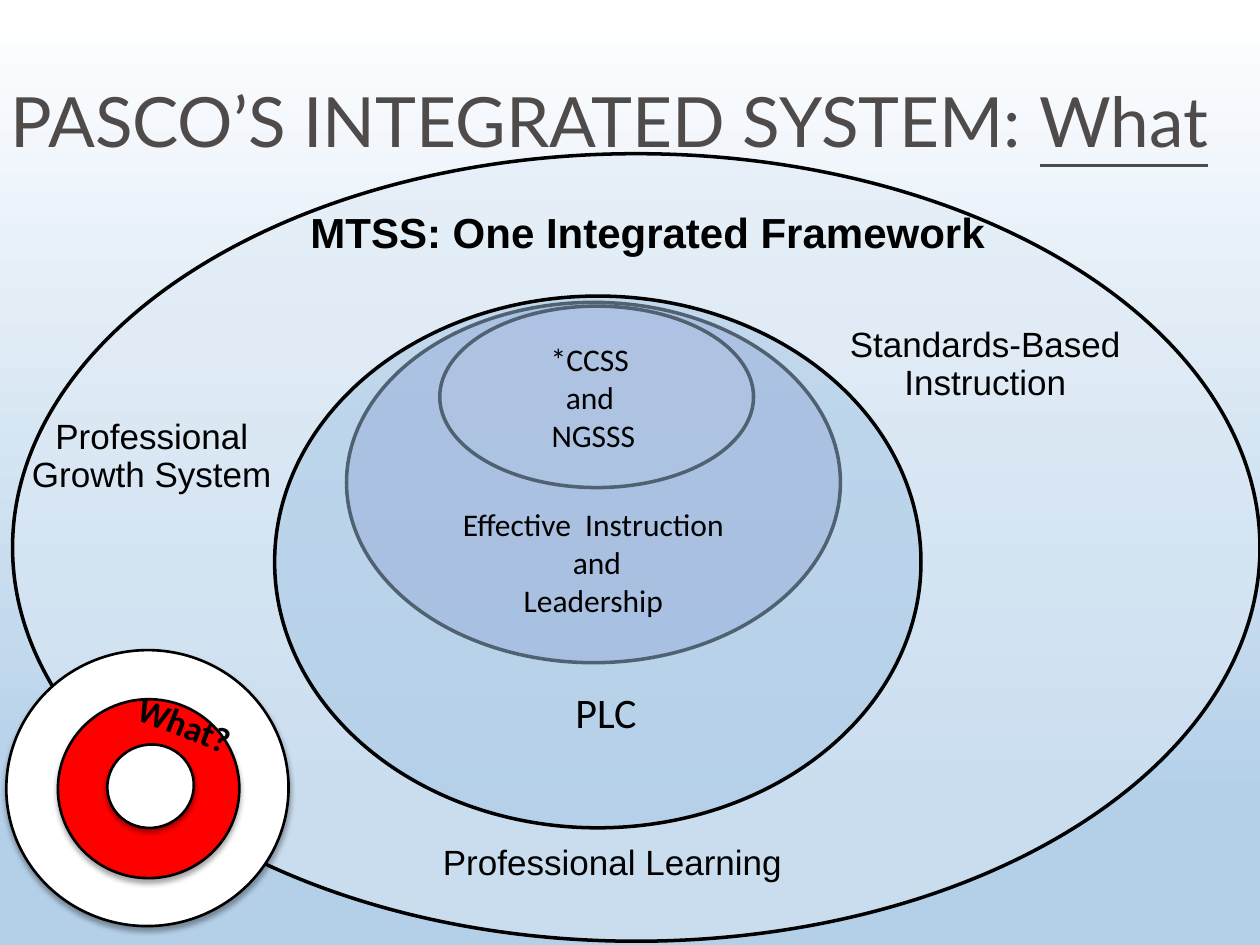
from collections import namedtuple

from lxml.etree import SubElement
from pptx import Presentation
from pptx.dml.color import RGBColor
from pptx.enum.shapes import MSO_SHAPE
from pptx.enum.text import MSO_ANCHOR as Anchor, MSO_AUTO_SIZE as AutoSize, PP_ALIGN as Align
from pptx.oxml.ns import qn
from pptx.util import Inches, Pt

COLORS = {
    "black": "000000", "white": "FFFFFF", "sky": "B4D0E9", "title": "4F4B4B",
    "framework": "E0EBF6", "community": "A1C4E3", "instruction": "9297CF",
    "standards": "C9CBE7", "target": "FF0000",
}
COLUMNS, ROWS = 100, 75
SLIDE_WIDTH, SLIDE_HEIGHT = Inches(10), Inches(7.5)
TITLE_ONLY = 5

Box = namedtuple("Box", "column row columns rows")


def color(name):
    return RGBColor.from_string(COLORS[name])


def inside(box, column, row, columns, rows):
    """Give a box whose place is counted from the corner of another."""
    return Box(box.column + column, box.row + row, columns, rows)


def lengths(box):
    """Turn grid columns and rows into slide lengths."""
    column, row = SLIDE_WIDTH / COLUMNS, SLIDE_HEIGHT / ROWS
    return [int(share * unit) for share, unit in zip(box, (column, row, column, row))]


def set_format(target, **values):
    for name, value in values.items():
        setattr(target, name, value)


def add_ellipse(slide, box, fill, opacity=100, line_width=2, rotation=0):
    ellipse = slide.shapes.add_shape(MSO_SHAPE.OVAL, *lengths(box))
    ellipse.shadow.inherit = False
    ellipse.rotation = rotation
    ellipse.fill.solid()
    ellipse.fill.fore_color.rgb = color(fill)
    ellipse.line.color.rgb = color("black")
    ellipse.line.width = Pt(line_width)
    if opacity < 100:
        fill_color = ellipse.element.spPr.find(qn("a:solidFill"))[0]
        SubElement(fill_color, qn("a:alpha"), val=str(opacity * 1000))
    return ellipse


def add_drop_shadow(shape):
    effects = shape.element.spPr.find(qn("a:effectLst"))
    shadow = SubElement(effects, qn("a:outerShdw"), blurRad=str(Pt(3)), dist=str(Pt(2)),
                        dir="5400000", rotWithShape="0")
    shadow_color = SubElement(shadow, qn("a:srgbClr"), val=COLORS["black"])
    SubElement(shadow_color, qn("a:alpha"), val="35000")


def add_label(slide, box, lines, size, font="Calibri", bold=False, wrap=True,
              align=Align.CENTER, rotation=0):
    label = slide.shapes.add_textbox(*lengths(box))
    label.rotation = rotation
    frame = label.text_frame
    frame.text = "\n".join(lines)
    frame.word_wrap = wrap
    for paragraph in frame.paragraphs:
        paragraph.alignment = align
        set_format(paragraph.runs[0].font, name=font, size=Pt(size), bold=bold)
        paragraph.runs[0].font.color.rgb = color("black")
    return frame


def paint_background(slide):
    fill = slide.background.fill
    fill.gradient()
    fill.gradient_angle = 270
    for stop, name, position in zip(fill.gradient_stops, ("white", "sky"), (0, 0.85)):
        stop.color.rgb = color(name)
        stop.position = position


def add_framework(slide, box):
    """Draw the nested ellipses with their labels."""
    add_ellipse(slide, box, "framework", 50)
    for place, fill, opacity in (
        ((26.5, 11.8, 39.2, 28.6), "instruction", 50),
        ((33.9, 12.1, 24.9, 14.4), "standards", 32),
        ((20.8, 11.3, 51.3, 42.2), "community", 50),
    ):
        add_ellipse(slide, inside(box, *place), fill, opacity)

    for place, text in (
        ((0.2, 12.2, 21.7, 23.8), "Professional Growth System"),
        ((66.2, 7.9, 22, 17.8), "Standards-Based Instruction"),
        ((15.7, 51.7, 64.6, 9.4), "Professional Learning "),
    ):
        frame = add_label(slide, inside(box, *place), [text], 20, "Arial")
        set_format(frame, vertical_anchor=Anchor.MIDDLE, margin_left=0, margin_right=0,
                   margin_top=0, margin_bottom=0)
        frame.paragraphs[0].line_spacing = 0.9

    add_label(slide, inside(box, 4.1, 3.7, 91.7, 9.1),
              [" MTSS: One Integrated Framework"], 24, "Arial", bold=True)
    add_label(slide, inside(box, 41.3, 14.3, 9.6, 10.1),
              ["*CCSS ", "and ", "NGSSS"], 18, wrap=False)
    add_label(slide, inside(box, 43.3, 41.8, 7.6, 5), ["PLC"], 24, wrap=False)
    add_label(slide, inside(box, 32.8, 27.4, 26.6, 10.1),
              ["Effective  Instruction", " and", "Leadership"], 18)


def add_title(slide, box):
    title = slide.shapes.title
    title.element.getparent().append(title.element)
    left, top, width, height = lengths(box)
    set_format(title, left=left, top=top, width=width, height=height)
    frame = title.text_frame
    set_format(frame, vertical_anchor=Anchor.BOTTOM, auto_size=AutoSize.NONE, word_wrap=True)
    paragraph = frame.paragraphs[0]
    paragraph.alignment = Align.LEFT
    for text, underline in (("PASCO’S INTEGRATED SYSTEM: ", False), ("What", True)):
        run = paragraph.add_run()
        run.text = text
        set_format(run.font, name="Lato", size=Pt(39.6), underline=underline)
        run.font.color.rgb = color("title")


def add_target(slide, box):
    """Draw the three rings and the tilted word on them."""
    for place, fill, rotation in (
        ((0, 0, box.columns, box.rows), "white", 357.2),
        ((4.1, 3.9, 14.4, 14.2), "target", 357.2),
        ((8, 7.5, 6.9, 6.6), "white", 341.3),
    ):
        ring = add_ellipse(slide, inside(box, *place), fill, line_width=1.5, rotation=rotation)
        add_drop_shadow(ring)
    add_label(slide, inside(box, 9.3, 3.9, 10.7, 4.4), ["What?"], 20, bold=True,
              align=Align.LEFT, rotation=21.7)


def main():
    presentation = Presentation()
    set_format(presentation, slide_width=SLIDE_WIDTH, slide_height=SLIDE_HEIGHT)
    slide = presentation.slides.add_slide(presentation.slide_layouts[TITLE_ONLY])
    paint_background(slide)
    add_framework(slide, Box(1, 12.2, 99, 62.5))
    add_title(slide, Box(-0.2, 3, 98.3, 10.3))
    add_target(slide, Box(0.5, 51.6, 22.4, 21.9))
    presentation.save("out.pptx")


if __name__ == "__main__":
    main()
